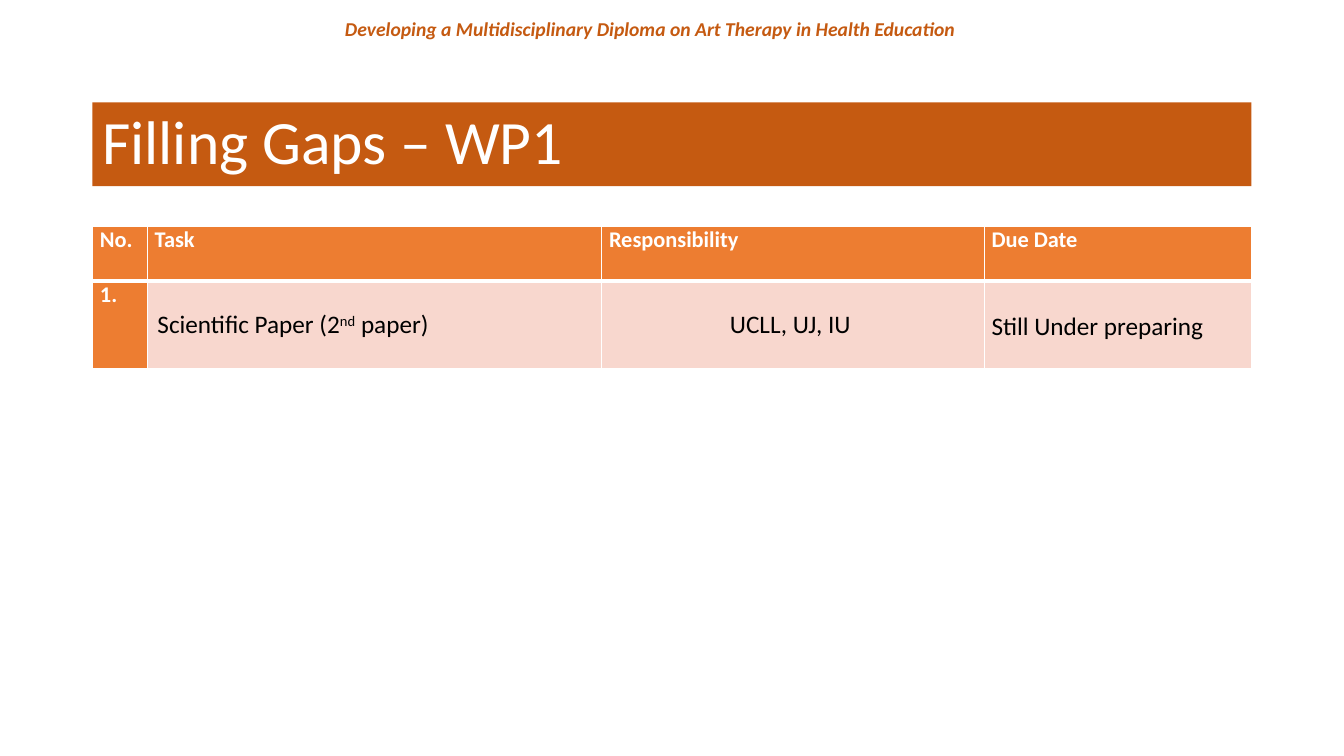
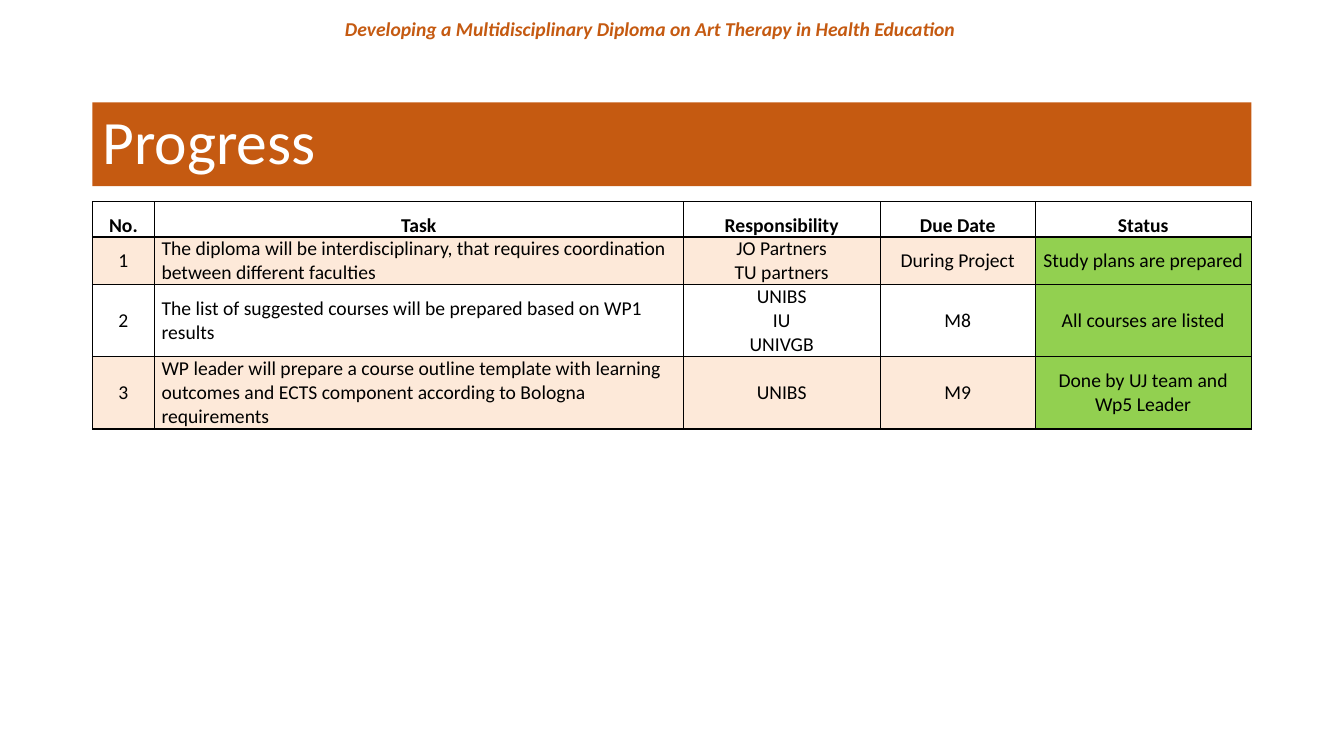
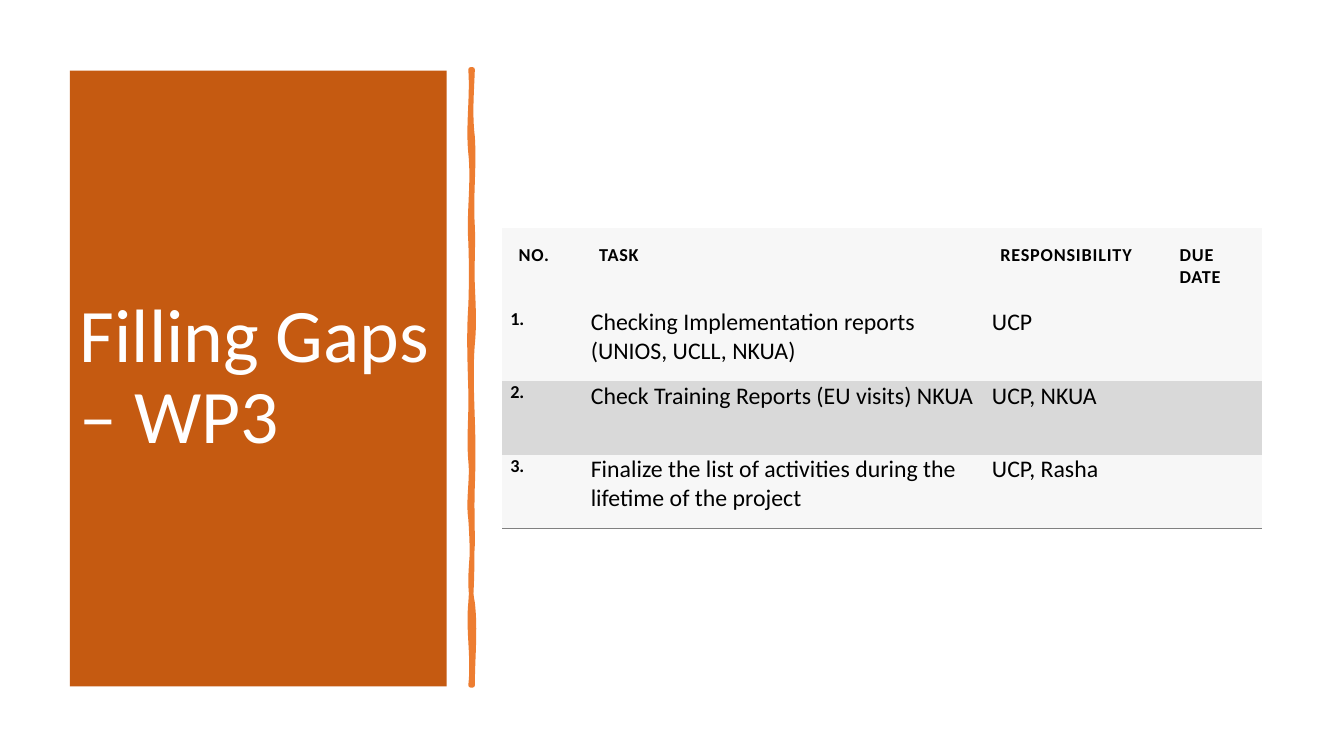
from lxml import etree
from pptx import Presentation
from pptx.dml.color import RGBColor
from pptx.enum.shapes import MSO_SHAPE
from pptx.enum.text import MSO_ANCHOR, PP_ALIGN
from pptx.oxml.ns import qn
from pptx.util import Cm, Pt

RECTANGLE = MSO_SHAPE.RECTANGLE
TOP, MIDDLE = MSO_ANCHOR.TOP, MSO_ANCHOR.MIDDLE
LEFT, CENTER = PP_ALIGN.LEFT, PP_ALIGN.CENTER

FONT = "Calibri"
RUST, ORANGE, PINK, PEACH = "C55A11", "ED7D31", "F8D7CE", "FDE9D9"
GREEN, PALE, SILVER, GRAY = "92D050", "F7F7F7", "D9D9D9", "808080"
BLACK, WHITE = "000000", "FFFFFF"

# Cell margins: left, top, right, bottom in cm
TIGHT = (0.18, 0, 0.18, 0)
ROOMY = (0.25, 0.13, 0.25, 0.13)
SIDES = "LRTB"


def color(hex_code):
    return RGBColor.from_string(hex_code)


def paint(shape, hex_code):
    shape.shadow.inherit = False
    shape.fill.solid()
    shape.fill.fore_color.rgb = color(hex_code)


def add_span(para, text, size, ink, bold=False, italic=False):
    span = para.add_run()
    span.text = text
    font = span.font
    font.name, font.size, font.bold, font.italic = FONT, Pt(size), bold, italic
    font.color.rgb = color(ink)
    return span


def add_page_header(page):
    box = page.shapes.add_textbox(Cm(7.98), Cm(0.3), Cm(16.94), Cm(0.86))
    box.text_frame.word_wrap = True
    para = box.text_frame.paragraphs[0]
    para.alignment = CENTER
    add_span(para, "Developing a Multidisciplinary Diploma on Art Therapy in Health Education ",
             14, RUST, bold=True, italic=True)


def add_title(page, text, left=2.33, top=2.58, width=29.21, height=2.11, size=44):
    band = page.shapes.add_shape(RECTANGLE, Cm(left), Cm(top), Cm(width), Cm(height))
    paint(band, RUST)
    band.line.fill.background()
    frame = band.text_frame
    frame.word_wrap = True
    frame.vertical_anchor = MIDDLE
    para = frame.paragraphs[0]
    para.alignment = LEFT
    para.line_spacing = 0.9
    add_span(para, text, size, WHITE)


def set_borders(cell, borders):
    """Draw the sides named in borders as side: (colour, points); clear the others."""
    properties = cell._tc.get_or_add_tcPr()
    for side in SIDES:
        line = etree.SubElement(properties, qn(f"a:ln{side}"))
        if side not in borders:
            etree.SubElement(line, qn("a:noFill"))
            continue
        hex_code, points = borders[side]
        line.set("w", str(Pt(points)))
        fill = etree.SubElement(line, qn("a:solidFill"))
        etree.SubElement(fill, qn("a:srgbClr")).set("val", hex_code)


def add_grid(page, left, top, widths, heights):
    frame = page.shapes.add_table(len(heights), len(widths), Cm(left), Cm(top),
                                  Cm(sum(widths)), Cm(sum(heights)))
    table = frame.table
    table.first_row = table.horz_banding = False
    for column, width in zip(table.columns, widths):
        column.width = Cm(width)
    for row, height in zip(table.rows, heights):
        row.height = Cm(height)
    return table


def write_cell(cell, text, size, fill, borders, ink=BLACK, bold=False, align=LEFT,
               anchor=TOP, margins=TIGHT, spacing=None):
    """Style a cell, write one paragraph per line of text, and return the last one."""
    set_borders(cell, borders)
    cell.fill.solid()
    cell.fill.fore_color.rgb = color(fill)
    cell.vertical_anchor = anchor
    (cell.margin_left, cell.margin_top,
     cell.margin_right, cell.margin_bottom) = map(Cm, margins)
    frame = cell.text_frame
    for index, line in enumerate(text.split("\n")):
        para = frame.add_paragraph() if index else frame.paragraphs[0]
        para.alignment = align
        para.line_spacing = spacing
        if line:
            add_span(para, line, size, ink, bold)
    return para


def add_paper_table(page, left, top):
    table = add_grid(page, left, top, (1.38, 11.45, 9.64, 6.73), (1.39, 2.2))
    thin, thick = (WHITE, 1), (WHITE, 3)
    head_borders = {**dict.fromkeys(SIDES, thin), "B": thick}
    body_borders = {**dict.fromkeys(SIDES, thin), "T": thick}

    for column, text in enumerate(("No.", "Task", "Responsibility", "Due Date")):
        write_cell(table.cell(0, column), text, 16, ORANGE, head_borders, WHITE, bold=True)
    write_cell(table.cell(1, 0), "1.", 16, ORANGE, body_borders, WHITE, bold=True)

    task = write_cell(table.cell(1, 1), "Scientific Paper (2", 18, PINK, body_borders,
                      anchor=MIDDLE, margins=ROOMY)
    ordinal = add_span(task, "nd", 18, BLACK)
    ordinal.font._element.set("baseline", "30000")
    add_span(task, " paper)", 18, BLACK)

    write_cell(table.cell(1, 2), "UCLL, UJ, IU ", 18, PINK, body_borders,
               align=CENTER, anchor=MIDDLE, margins=ROOMY)
    write_cell(table.cell(1, 3), "Still Under preparing", 18, PINK, body_borders,
               anchor=MIDDLE, margins=(0.18, 0.1, 0.18, 0))


def add_progress_table(page, left, top):
    rows = (
        ("No.", "Task", "Responsibility", "Due Date", "Status"),
        ("1", "The diploma will be interdisciplinary, that requires coordination "
              "between different faculties",
         "JO Partners\nTU partners", "During Project", "Study plans are prepared "),
        ("2", "The list of suggested courses will be prepared based on WP1 results",
         "UNIBS\nIU\nUNIVGB", "M8", "All courses are listed"),
        ("3", "WP leader will prepare a course outline template with learning outcomes "
              "and ECTS component according to Bologna requirements",
         "UNIBS", "M9", "Done by UJ team and Wp5 Leader"),
    )
    table = add_grid(page, left, top, (1.56, 13.33, 4.96, 3.91, 5.44),
                     (0.76, 1.2, 1.82, 1.82))
    borders = dict.fromkeys(SIDES, (BLACK, 1))
    for row, texts in enumerate(rows):
        is_head = row == 0
        for column, text in enumerate(texts):
            is_status = column == 4 and not is_head
            is_task = column == 1 and not is_head
            fill = GREEN if is_status else PEACH if row % 2 else WHITE
            write_cell(table.cell(row, column), text, 14, fill, borders, bold=is_head,
                       align=LEFT if is_task else CENTER, anchor=MIDDLE,
                       spacing=1.5 if is_head else None)


def add_gap_table(page, left, top):
    heads = ("NO.", "TASK", "RESPONSIBILITY", "DUE DATE")
    rows = (
        ("1.", "Checking Implementation reports (UNIOS, UCLL, NKUA)", "UCP", ""),
        ("2.", "Check Training Reports (EU visits) NKUA", "UCP, NKUA", ""),
        ("3.", "Finalize the list of activities during the lifetime of the project",
         "UCP, Rasha", ""),
    )
    table = add_grid(page, left, top, (2.03, 10.11, 4.52, 2.48), (2.02, 1.85, 1.85, 1.85))
    for column, text in enumerate(heads):
        para = write_cell(table.cell(0, column), text, 13, PALE, {}, bold=True,
                          margins=(0.41,) * 4)
        para.runs[0].font._element.set("spc", "60")
    for row, texts in enumerate(rows, 1):
        borders = {"B": (GRAY, 1)} if row == len(rows) else {}
        fill = PALE if row % 2 else SILVER
        for column, text in enumerate(texts):
            is_number = column == 0
            write_cell(table.cell(row, column), text, 13 if is_number else 17, fill,
                       borders, bold=is_number, margins=(0.2, 0, 0.2, 0.28))


def bend_segments(shape, pulls):
    """Turn each straight segment into a curve whose two handles are pulled sideways."""
    start = shape._element.find(f".//{qn('a:moveTo')}/{qn('a:pt')}")
    segments = shape._element.findall(f".//{qn('a:lnTo')}")
    for segment, handles in zip(segments, pulls):
        end = segment.find(qn("a:pt"))
        x0, y0, x1, y1 = (int(point.get(axis)) for point in (start, end) for axis in "xy")
        curve = etree.Element(qn("a:cubicBezTo"))
        for share, x, pull in zip((1 / 3, 2 / 3), (x0, x1), handles):
            handle = etree.SubElement(curve, qn("a:pt"))
            handle.set("x", str(x + Cm(pull)))
            handle.set("y", str(round(y0 + share * (y1 - y0))))
        segment.getparent().replace(segment, curve)
        curve.append(end)
        start = end


def add_brush_line(page, left, top, width=0.05, height=15.52):
    # Each wave: where it ends, then the pull of its first and second handle
    down = ((2.11, 0.05, -0.07), (4.34, 0.08, -0.05), (5.97, 0.02, 0.02),
            (8.08, -0.05, -0.02), (9.86, 0.02, -0.05), (11.33, 0.05, -0.07),
            (13.44, 0.05, 0.05), (height, -0.07, 0.08))
    up = ((13.44, 0, 0.08), (11.96, -0.1, -0.02), (10.49, 0, -0.02),
          (8.84, 0.02, 0.02), (6.91, -0.02, -0.05), (5.44, 0.05, 0.02),
          (3.96, -0.02, 0.02), (1.7, -0.05, 0.05), (0, -0.07, -0.02))
    turn = (height, 0, 0)
    points = [(Cm(left), Cm(top + wave[0])) for wave in down]
    points += [(Cm(left + width), Cm(top + wave[0])) for wave in (turn, *up)]
    builder = page.shapes.build_freeform(Cm(left), Cm(top))
    builder.add_line_segments(points, close=True)
    brush = builder.convert_to_shape()
    bend_segments(brush, [wave[1:] for wave in (*down, turn, *up)])
    paint(brush, ORANGE)
    brush.line.color.rgb = color(ORANGE)
    brush.line.width = Pt(3.25)
    etree.SubElement(brush.line._get_or_add_ln(), qn("a:round"))


def main():
    deck = Presentation()
    deck.slide_width, deck.slide_height = Cm(33.87), Cm(19.05)
    paper, progress, gaps = [deck.slides.add_slide(deck.slide_layouts[6]) for _ in range(3)]

    add_page_header(paper)
    add_title(paper, "Filling Gaps – WP1")
    add_paper_table(paper, 2.34, 5.7)

    add_page_header(progress)
    add_title(progress, "Progress")
    add_progress_table(progress, 2.33, 5.08)

    add_title(gaps, "Filling Gaps – WP3", 1.76, 1.78, 9.5, 15.52, size=54)
    add_brush_line(gaps, 11.86, 1.75)
    add_gap_table(gaps, 12.66, 5.74)

    deck.save("out.pptx")


if __name__ == "__main__":
    main()
